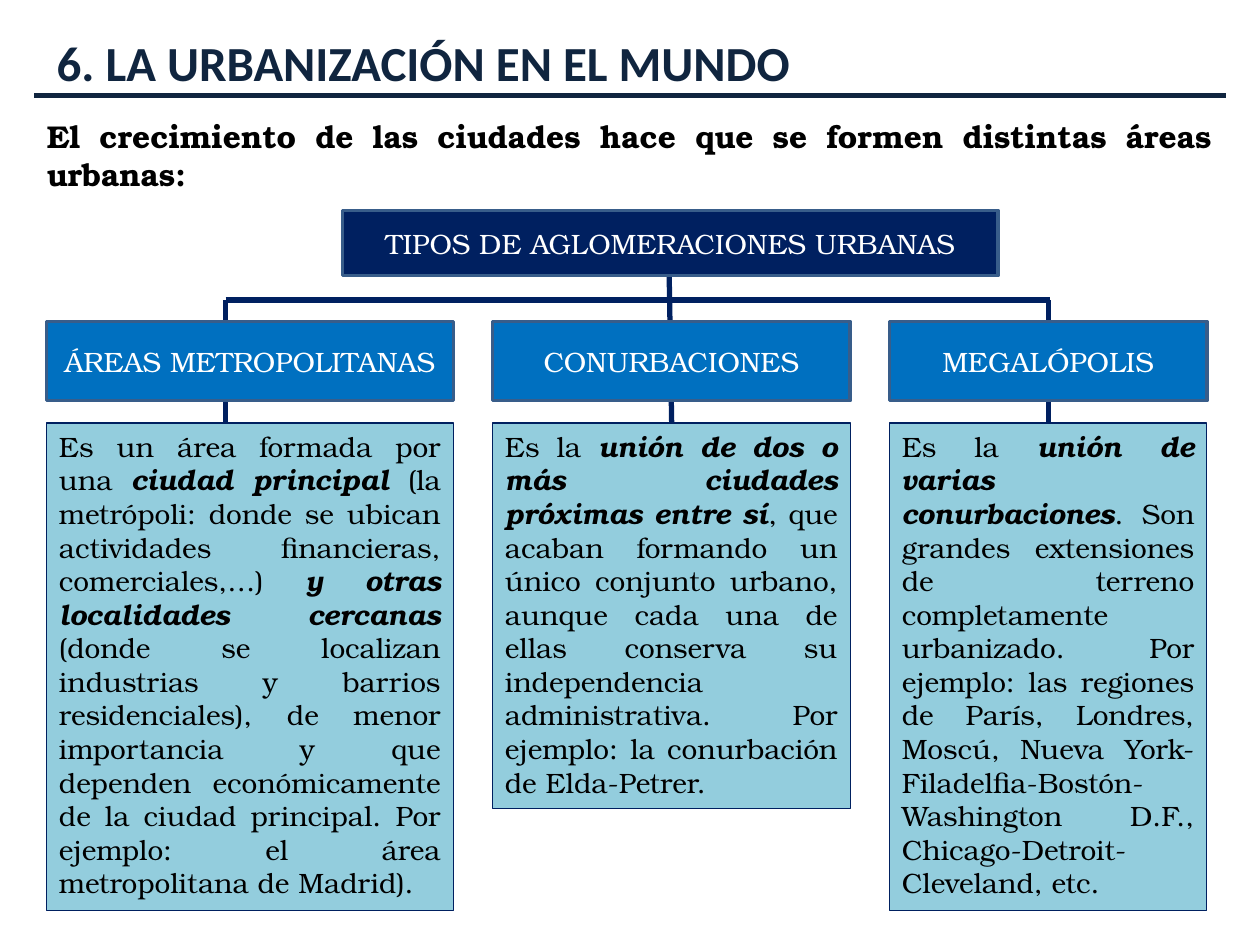
"""Build the slide on the types of urban agglomerations."""
from dataclasses import dataclass

from lxml import etree
from pptx import Presentation
from pptx.dml.color import RGBColor
from pptx.enum.shapes import MSO_CONNECTOR, MSO_SHAPE
from pptx.enum.text import MSO_ANCHOR, MSO_AUTO_SIZE, PP_ALIGN
from pptx.oxml.ns import qn
from pptx.util import Cm, Pt

STRAIGHT = MSO_CONNECTOR.STRAIGHT
RECTANGLE = MSO_SHAPE.RECTANGLE
TOP, MIDDLE = MSO_ANCHOR.TOP, MSO_ANCHOR.MIDDLE
LEFT, CENTER, JUSTIFY = PP_ALIGN.LEFT, PP_ALIGN.CENTER, PP_ALIGN.JUSTIFY
NO_AUTOFIT = MSO_AUTO_SIZE.NONE

INK = RGBColor(0x10, 0x25, 0x3F)
NAVY = RGBColor(0x00, 0x20, 0x60)
BLUE = RGBColor(0x00, 0x70, 0xC0)
STEEL = RGBColor(0x38, 0x5D, 0x8A)
AQUA = RGBColor(0x93, 0xCD, 0xDD)
BLACK = RGBColor(0x00, 0x00, 0x00)
WHITE = RGBColor(0xFF, 0xFF, 0xFF)

SERIF = "TeX Gyre Bonum"
TITLE_FORMAT = {"name": "Calibri", "size": Pt(28), "bold": True}
INTRO_FORMAT = {"name": SERIF, "size": Pt(18), "bold": True}
PLAIN_FORMAT = {"name": SERIF, "size": Pt(16), "bold": False, "italic": False}
STRONG_FORMAT = PLAIN_FORMAT | {"bold": True, "italic": True}

BUS_TOP, HEADING_TOP, DETAIL_TOP = 6.05, 6.48, 8.53
ROOT_BOTTOM, HEADING_HEIGHT = 5.56, 1.6


@dataclass(frozen=True)
class Span:
    text: str
    format: dict
    color: RGBColor = BLACK


@dataclass(frozen=True)
class Area:
    heading: str
    left: float
    width: float
    detail_height: float
    stem: tuple[float, float, float, float]
    detail: tuple[str, ...]


AREAS = (
    Area("ÁREAS METROPOLITANAS", 0.94, 8.2, 9.83, (4.55, BUS_TOP, 4.55, DETAIL_TOP), (
        "Es un área formada por una ",
        "ciudad principal",
        " (la metrópoli: donde se ubican actividades financieras, comerciales,…) ",
        "y otras localidades cercanas",
        " (donde se localizan industrias y barrios residenciales), de menor importancia y que "
        "dependen económicamente de la ciudad principal. Por ejemplo: el área metropolitana "
        "de Madrid).",
    )),
    Area("CONURBACIONES", 9.93, 7.21, 7.77, (13.49, ROOT_BOTTOM, 13.54, DETAIL_TOP), (
        "Es la ",
        "unión de dos o más ciudades próximas entre sí",
        ", que acaban formando un único conjunto urbano, aunque cada una de ellas conserva su "
        "independencia administrativa. Por ejemplo: la conurbación de Elda-Petrer.",
    )),
    Area("MEGALÓPOLIS", 17.93, 6.4, 9.83, (21.13, BUS_TOP, 21.13, DETAIL_TOP), (
        "Es la ",
        "unión de varias conurbaciones",
        ". Son grandes extensiones de terreno completamente urbanizado. Por ejemplo: las "
        "regiones de París, Londres, Moscú, Nueva York-Filadelfia-Bostón-Washington D.F., "
        "Chicago-Detroit-Cleveland, etc.",
    )),
)


def write(box, spans: list[Span], align: PP_ALIGN, anchor: MSO_ANCHOR) -> None:
    frame = box.text_frame
    frame_format = {"word_wrap": True, "auto_size": NO_AUTOFIT, "vertical_anchor": anchor}
    for name, value in frame_format.items():
        setattr(frame, name, value)
    para = frame.paragraphs[0]
    para.alignment = align
    for span in spans:
        run = para.add_run()
        run.text = span.text
        for name, value in span.format.items():
            setattr(run.font, name, value)
        run.font.color.rgb = span.color


def place(box, left: float, top: float, width: float, height: float) -> None:
    for name, value in {"left": left, "top": top, "width": width, "height": height}.items():
        setattr(box, name, Cm(value))


def add_line(page, ends: tuple[float, float, float, float], color: RGBColor) -> None:
    line = page.shapes.add_connector(STRAIGHT, *map(Cm, ends))
    line.line.color.rgb = color
    line.line.width = Pt(3)
    etree.SubElement(line._element.spPr, qn("a:effectLst"))


def add_box(page, bounds: tuple[float, float, float, float], fill: RGBColor,
            border: RGBColor, border_width: float):
    box = page.shapes.add_shape(RECTANGLE, *map(Cm, bounds))
    box.shadow.inherit = False
    box.fill.solid()
    box.fill.fore_color.rgb = fill
    box.line.color.rgb = border
    box.line.width = Pt(border_width)
    return box


def add_heading(page, text: str, bounds: tuple[float, float, float, float],
                fill: RGBColor) -> None:
    box = add_box(page, bounds, fill, STEEL, 2)
    write(box, [Span(text, PLAIN_FORMAT, WHITE)], CENTER, MIDDLE)


def add_detail(page, area: Area) -> None:
    bounds = (area.left, DETAIL_TOP, area.width, area.detail_height)
    box = add_box(page, bounds, AQUA, NAVY, 0.75)
    spans = [Span(text, STRONG_FORMAT if index % 2 else PLAIN_FORMAT)
             for index, text in enumerate(area.detail)]
    write(box, spans, JUSTIFY, TOP)


def add_texts(page) -> None:
    title, intro = page.placeholders
    place(title, 0.89, 0.53, 23.39, 1.45)
    write(title, [Span("6. LA URBANIZACIÓN EN EL MUNDO", TITLE_FORMAT, INK)], LEFT, TOP)
    place(intro, 0.69, 2.24, 24, 1.8)
    para = intro.text_frame.paragraphs[0]
    para.space_before = Pt(0)
    properties = para._p.get_or_add_pPr()
    for name in ("marL", "indent"):
        properties.set(name, "0")
    etree.SubElement(properties, qn("a:buNone"))
    sentence = "El crecimiento de las ciudades hace que se formen distintas áreas urbanas:"
    write(intro, [Span(sentence, INTRO_FORMAT)], JUSTIFY, TOP)


def main() -> None:
    deck = Presentation()
    deck.slide_width, deck.slide_height = Cm(25.4), Cm(19.05)
    page = deck.slides.add_slide(deck.slide_layouts[1])
    add_texts(page)
    add_line(page, (0.69, 1.93, 24.71, 1.93), INK)
    add_line(page, (4.55, BUS_TOP, 21.16, BUS_TOP), NAVY)
    for area in AREAS:
        add_detail(page, area)
        add_line(page, area.stem, NAVY)
        add_heading(page, area.heading, (area.left, HEADING_TOP, area.width, HEADING_HEIGHT), BLUE)
    add_heading(page, "TIPOS DE AGLOMERACIONES URBANAS", (6.91, 4.24, 13.21, 1.32), NAVY)
    deck.save("out.pptx")


if __name__ == "__main__":
    main()
